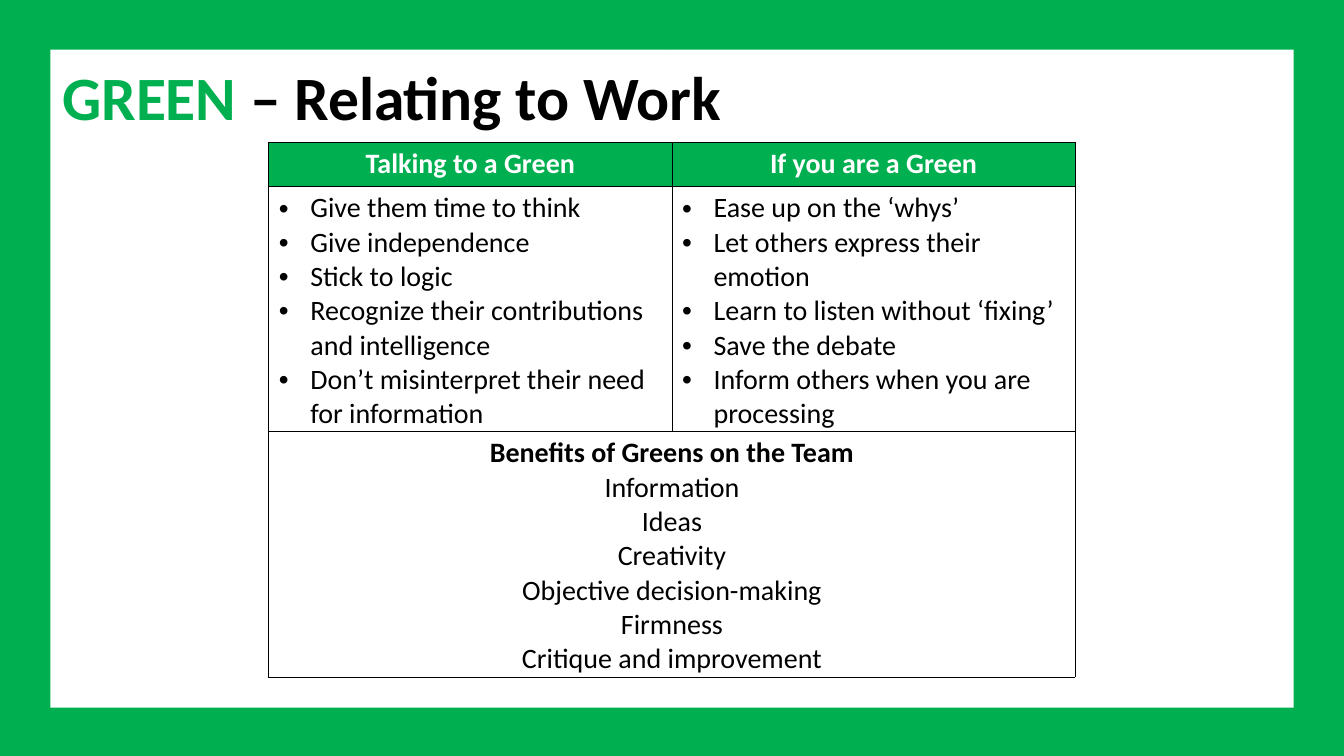
"""Build the slide about how Greens relate to work."""
from pptx import Presentation
from pptx.dml.color import RGBColor
from pptx.enum.shapes import MSO_SHAPE as Preset
from pptx.enum.text import PP_ALIGN as Align
from pptx.oxml import parse_xml
from pptx.oxml.ns import nsdecls
from pptx.util import Pt

GREEN, BLACK, WHITE = "00B050", "000000", "FFFFFF"
HEADINGS = ["Talking to a Green", "If you are a Green"]
ADVICE = [
    ["Give them time to think", "Give independence", "Stick to logic",
     "Recognize their contributions and intelligence",
     "Don’t misinterpret their need for information"],
    ["Ease up on the ‘whys’", "Let others express their emotion",
     "Learn to listen without ‘fixing’", "Save the debate",
     "Inform others when you are processing"],
]
BENEFITS = ["Benefits of Greens on the Team", "Information", "Ideas", "Creativity",
            "Objective decision-making", "Firmness", "Critique and improvement"]


def colour(value):
    """Turn a hex string into a colour."""
    return RGBColor.from_string(value)


def style_font(font, size, value, bold):
    """Set the face, size, colour and weight of a font."""
    font.name, font.size, font.bold = "Calibri", Pt(size), bold
    font.color.rgb = colour(value)


def add_title(page, parts):
    """Add the title from pairs of text and colour."""
    box = page.shapes.add_textbox(Pt(44.6), Pt(41), Pt(871.2), Pt(54.7))
    frame = box.text_frame
    frame.word_wrap = True
    frame.margin_left = frame.margin_right = frame.margin_bottom = 0
    frame.margin_top = Pt(1)
    para = frame.paragraphs[0]
    style_font(para.font, 44, BLACK, True)
    for text, value in parts:
        span = para.add_run()
        span.text = text
        style_font(span.font, 44, value, True)
        span.font._element.set("spc", "-10")


def add_bar(page, left, top, width, height):
    """Add one green bar of the frame."""
    bar = page.shapes.add_shape(Preset.RECTANGLE, Pt(left), Pt(top), Pt(width), Pt(height))
    bar.shadow.inherit = False
    bar.fill.solid()
    bar.fill.fore_color.rgb = colour(GREEN)
    bar.line.fill.background()


def add_frame(page):
    """Add the frame, two bars to each side of the slide."""
    for half in range(2):
        for top in (-0.5, 505.5):
            add_bar(page, half * 480, top, 480, 36)
        for left in (0, 924):
            add_bar(page, left, half * 270, 36, 270)


def add_borders(cell):
    """Draw thin black lines around a cell."""
    for side in ("lnL", "lnR", "lnT", "lnB"):
        cell._tc.get_or_add_tcPr().append(parse_xml(
            f'<a:{side} {nsdecls("a")} w="6350"><a:solidFill>'
            f'<a:srgbClr val="{BLACK}"/></a:solidFill></a:{side}>'))


def add_bullet(para):
    """Give a paragraph a hanging bullet."""
    props = para._p.get_or_add_pPr()
    props.set("marL", str(Pt(22.5)))
    props.set("indent", str(-Pt(22.5)))
    props.append(parse_xml(f'<a:buFont {nsdecls("a")} typeface="Arial"/>'))
    props.append(parse_xml(f'<a:buChar {nsdecls("a")} char="•"/>'))


def fill_cell(cell, lines, value=BLACK, bold_first=False, bullets=False):
    """Write lines into a cell, as bullets or centred."""
    cell.text_frame.text = "\n".join(lines)
    for index, para in enumerate(cell.text_frame.paragraphs):
        if bullets:
            add_bullet(para)
        else:
            para.alignment = Align.CENTER
        style_font(para.font, 20, value, bold_first and index == 0)


def add_advice_table(page):
    """Add the table of advice and benefits."""
    heights = [31.5, 175, 175.5]
    table = page.shapes.add_table(3, 2, Pt(192), Pt(101.5), Pt(576), Pt(sum(heights))).table
    for row, height in zip(table.rows, heights):
        row.height = Pt(height)
    for index, row in enumerate(table.rows):
        for cell in row.cells:
            add_borders(cell)
            cell.margin_top, cell.margin_bottom = Pt(3.6), 0
            cell.fill.solid()
            cell.fill.fore_color.rgb = colour(WHITE if index else GREEN)
    for column, (heading, lines) in enumerate(zip(HEADINGS, ADVICE)):
        fill_cell(table.cell(0, column), [heading], WHITE, bold_first=True)
        fill_cell(table.cell(1, column), lines, bullets=True)
    table.cell(2, 0).merge(table.cell(2, 1))
    fill_cell(table.cell(2, 0), BENEFITS, bold_first=True)


def main():
    """Build and save the deck."""
    deck = Presentation()
    deck.slide_width, deck.slide_height = Pt(960), Pt(540)
    page = deck.slides.add_slide(deck.slide_layouts[6])
    add_title(page, [("GREEN ", GREEN), ("– Relating to Work", BLACK)])
    add_advice_table(page)
    add_frame(page)
    deck.save("out.pptx")


if __name__ == "__main__":
    main()
